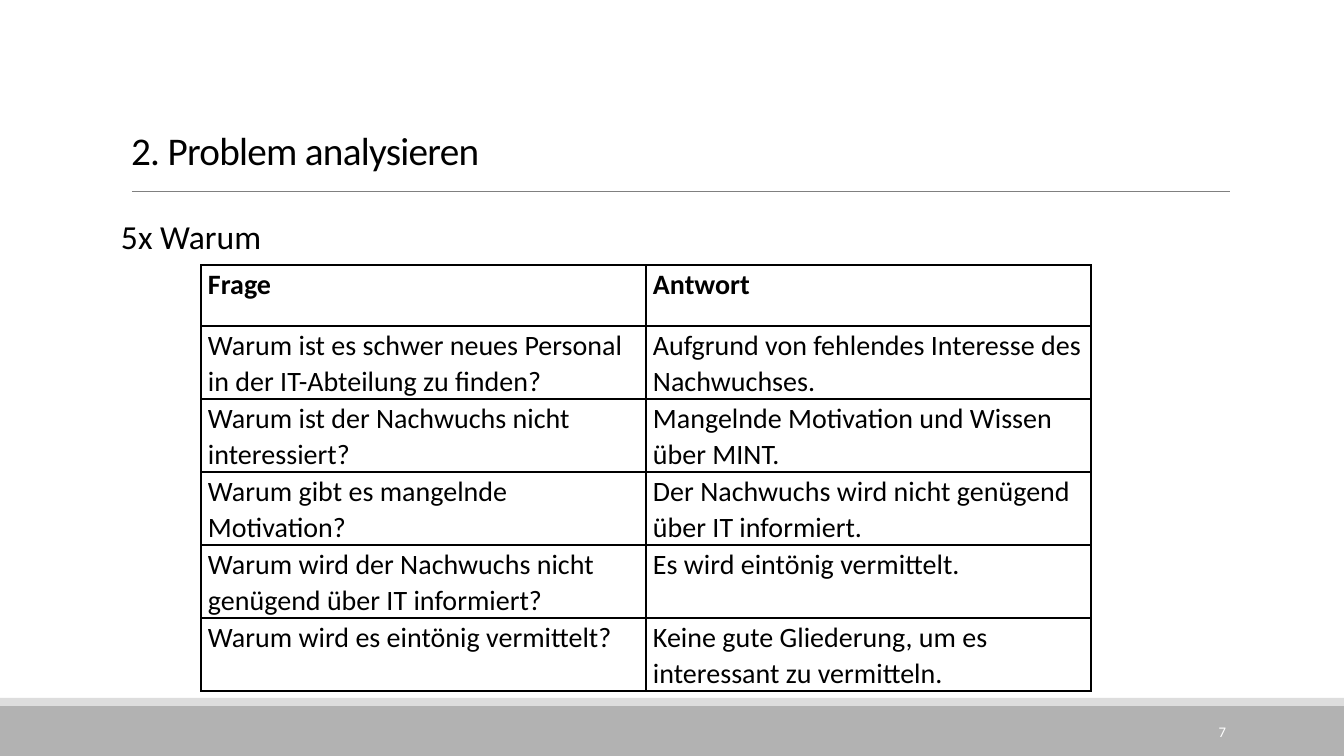
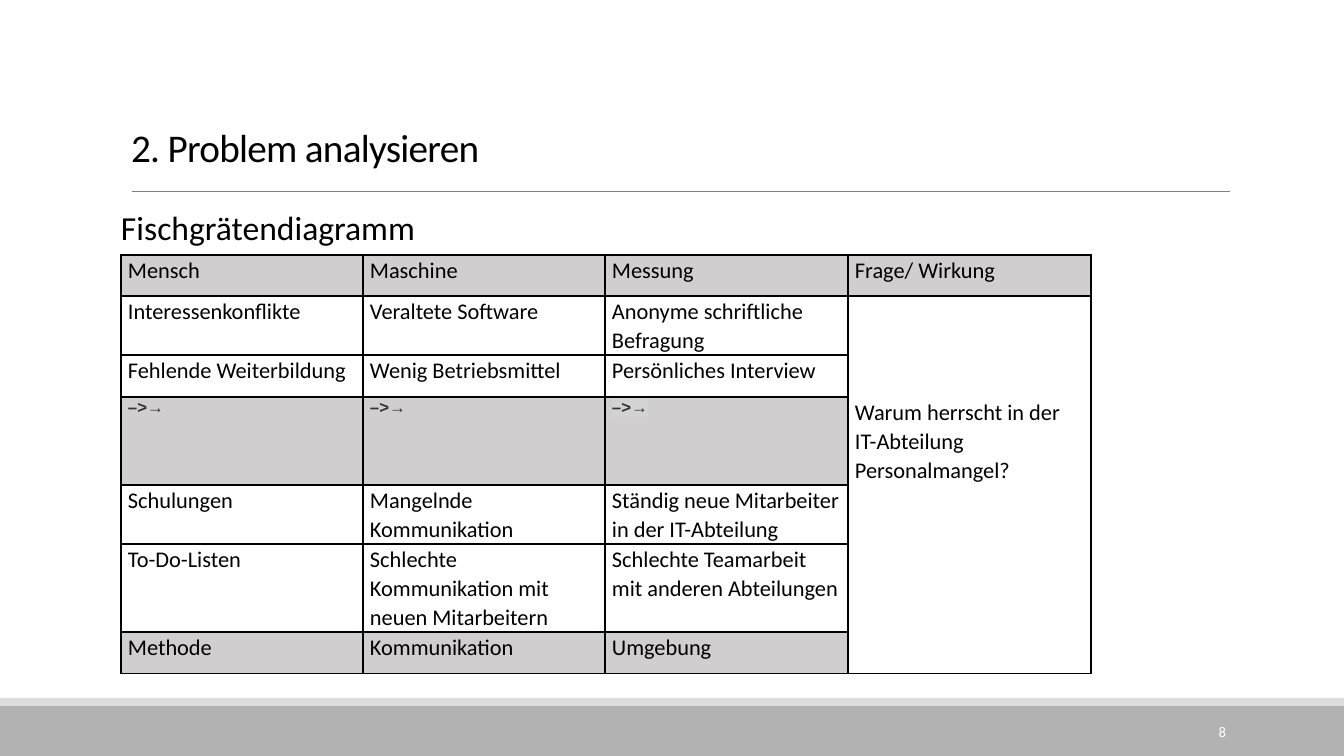
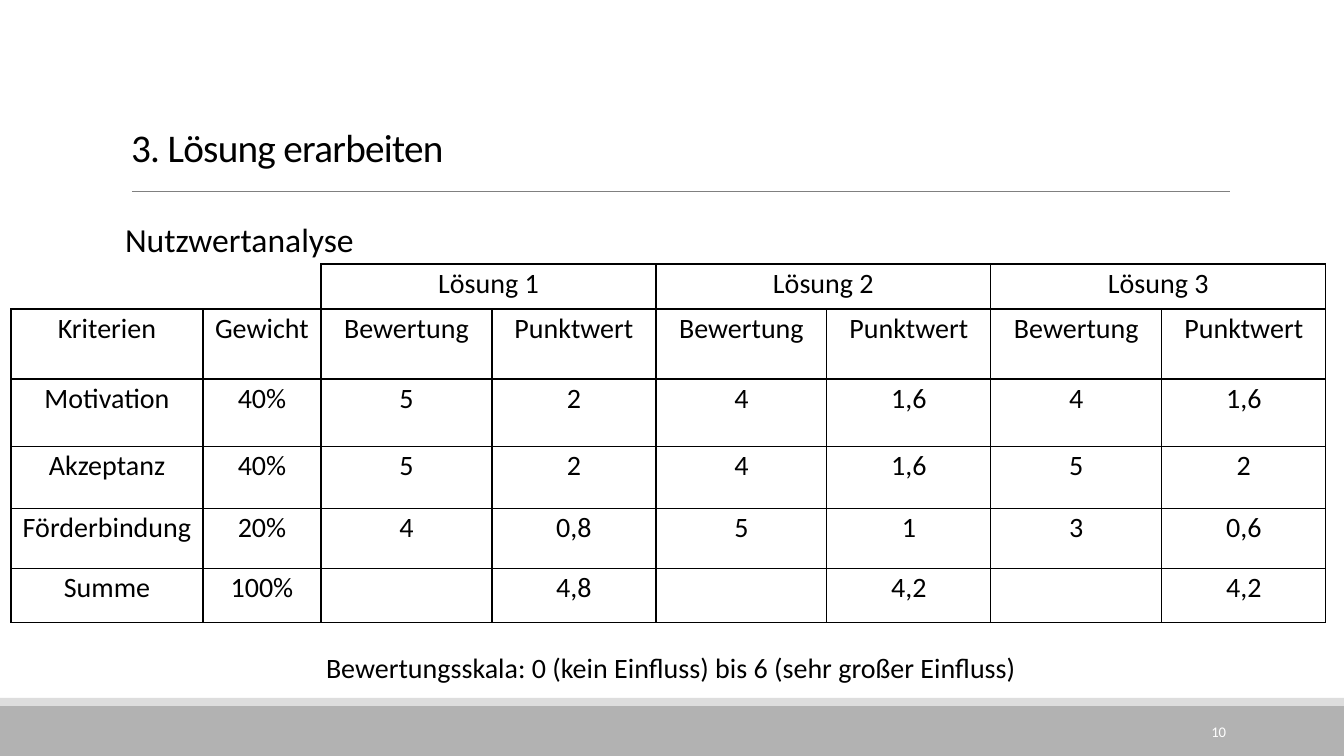
from lxml import etree
from pptx import Presentation
from pptx import util as u
from pptx.dml.color import RGBColor
from pptx.enum import shapes, text
from pptx.oxml import ns

SCALE = 12192000 / 1344  # EMU in one px
SLIDE_W, SLIDE_H = 1344, 756
TITLE_ONLY = 5

COLORS = {
    "text": "000000",
    "arrow": "333333",
    "highlight": "D3D3D3",
    "shade": "D0CECE",
    "band": "B2B2B2",
    "band_edge": "DDDDDD",
    "rule": "808080",
    "page": "FFFFFF",
}
LEFT, CENTER, RIGHT = text.PP_ALIGN.LEFT, text.PP_ALIGN.CENTER, text.PP_ALIGN.RIGHT
ALL_SIDES = "LRTB"

QUESTIONS = [
    ["Frage", "Antwort"],
    ["Warum ist es schwer neues Personal in der IT-Abteilung zu finden?",
     "Aufgrund von fehlendes Interesse des Nachwuchses."],
    ["Warum ist der Nachwuchs nicht interessiert?",
     "Mangelnde Motivation und Wissen über MINT."],
    ["Warum gibt es mangelnde Motivation?",
     "Der Nachwuchs wird nicht genügend über IT informiert."],
    ["Warum wird der Nachwuchs nicht genügend über IT informiert?",
     "Es wird eintönig vermittelt."],
    ["Warum wird es eintönig vermittelt?",
     "Keine gute Gliederung, um es interessant zu vermitteln."],
]

ARROW = "–>→"
FISHBONE = [
    ["Mensch", "Maschine", "Messung", "Frage/ Wirkung"],
    ["Interessenkonflikte", "Veraltete Software", "Anonyme schriftliche Befragung", ""],
    ["Fehlende Weiterbildung", "Wenig Betriebsmittel", "Persönliches Interview", ""],
    [ARROW, ARROW, ARROW, "Warum herrscht in der IT-Abteilung Personalmangel?"],
    ["Schulungen", "Mangelnde Kommunikation",
     "Ständig neue Mitarbeiter in der IT-Abteilung", ""],
    ["To-Do-Listen", "Schlechte Kommunikation mit neuen Mitarbeitern",
     "Schlechte Teamarbeit mit anderen Abteilungen", ""],
    ["Methode", "Kommunikation", "Umgebung", ""],
]

RATINGS = [
    ["", "", "Lösung 1", "", "Lösung 2", "", "Lösung 3", ""],
    ["Kriterien", "Gewicht"] + ["Bewertung", "Punktwert"] * 3,
    ["Motivation", "40%", "5", "2", "4", "1,6", "4", "1,6"],
    ["Akzeptanz", "40%", "5", "2", "4", "1,6", "5", "2"],
    ["Förderbindung", "20%", "4", "0,8", "5", "1", "3", "0,6"],
    ["Summe", "100%", "", "4,8", "", "4,2", "", "4,2"],
]


# Helpers
def px(length):
    return u.Emu(round(length * SCALE))


def rgb(color):
    return RGBColor.from_string(COLORS[color])


def apply(target, formats):
    for name, value in formats.items():
        setattr(target, name, value)


def write(frame, words, size, color="text", font="Calibri", bold=False,
          align=LEFT, spacing=1.0):
    """Fill a text frame with one paragraph and return its run."""
    paragraph = frame.paragraphs[0]
    apply(paragraph, {"alignment": align, "line_spacing": spacing})
    run = paragraph.add_run()
    run.text = words
    apply(run.font, {"size": u.Pt(size), "name": font, "bold": bold})
    run.font.color.rgb = rgb(color)
    return run


def add_label(slide, box, words, size, anchor=text.MSO_ANCHOR.TOP, inset=10, **style):
    frame = slide.shapes.add_textbox(*map(px, box)).text_frame
    apply(frame, {"word_wrap": True, "vertical_anchor": anchor,
                  "margin_left": px(inset), "margin_right": px(inset)})
    write(frame, words, size, **style)


def add_band(slide, top, height, color):
    band = slide.shapes.add_shape(shapes.MSO_SHAPE.RECTANGLE,
                                  *map(px, (0, top, SLIDE_W, height)))
    band.shadow.inherit = False
    band.fill.solid()
    band.fill.fore_color.rgb = rgb(color)
    band.line.fill.background()


def add_rule(slide, left, right, y):
    rule = slide.shapes.add_connector(shapes.MSO_CONNECTOR.STRAIGHT,
                                      *map(px, (left, y, right, y)))
    rule.line.color.rgb = rgb("rule")
    rule.line.width = u.Pt(0.5)
    etree.SubElement(rule._element.spPr, ns.qn("a:effectLst"))


# Slide frame: bands, title, rule, subtitle and page number
def add_content_slide(prs, title, title_top, title_bottom, subtitle, subtitle_at, number):
    slide = prs.slides.add_slide(prs.slide_layouts[TITLE_ONLY])
    add_band(slide, 706, 50, "band")
    add_band(slide, 698, 8, "band_edge")
    add_rule(slide, 132, 1230, 191)

    heading = slide.shapes.title
    apply(heading, {"left": px(121), "top": px(title_top),
                    "width": px(1109), "height": px(title_bottom - title_top)})
    apply(heading.text_frame, {"vertical_anchor": text.MSO_ANCHOR.BOTTOM,
                               "auto_size": text.MSO_AUTO_SIZE.NONE})
    run = write(heading.text_frame, title, 28, spacing=0.85)
    run.font._element.set("spc", "-50")

    add_label(slide, (*subtitle_at, 1109, 44), subtitle, 24, inset=0, spacing=0.9)
    add_label(slide, (1092, 712, 144, 40), number, 10.5, color="page",
              align=RIGHT, anchor=text.MSO_ANCHOR.MIDDLE)
    return slide


# Tables
def set_borders(cell, sides):
    properties = cell._tc.get_or_add_tcPr()
    for side in ALL_SIDES:
        border = etree.SubElement(properties, ns.qn("a:ln" + side), w=str(u.Pt(1)))
        if side in sides:
            fill = etree.SubElement(border, ns.qn("a:solidFill"))
            etree.SubElement(fill, ns.qn("a:srgbClr"), val=COLORS["text"])
        else:
            etree.SubElement(border, ns.qn("a:noFill"))


def add_grid(slide, left, top, widths, heights, rows, cell_style,
             cell_sides=lambda row, col: ALL_SIDES,
             shaded=lambda row, col: False, inset=7):
    """Draw a table; cell_style, cell_sides and shaded are rules on (row, col)."""
    table = slide.shapes.add_table(
        len(rows), len(widths),
        *map(px, (left, top, sum(widths), sum(heights)))).table
    apply(table, {"first_row": False, "horz_banding": False})
    for column, width in zip(table.columns, widths):
        column.width = px(width)
    for row, height in zip(table.rows, heights):
        row.height = px(height)
    for r, row_words in enumerate(rows):
        for c, words in enumerate(row_words):
            cell = table.cell(r, c)
            apply(cell, {"margin_left": px(inset), "margin_right": px(inset),
                         "margin_top": 0, "margin_bottom": 0})
            set_borders(cell, cell_sides(r, c))
            if shaded(r, c):
                cell.fill.solid()
                cell.fill.fore_color.rgb = rgb("shade")
            else:
                cell.fill.background()
            if words:
                write(cell.text_frame, words, spacing=1.07, **cell_style(r, c))
    return table


def highlight(cell):
    fill = cell.text_frame.paragraphs[0].runs[0].font._element.find(ns.qn("a:solidFill"))
    mark = etree.Element(ns.qn("a:highlight"))
    etree.SubElement(mark, ns.qn("a:srgbClr"), val=COLORS["highlight"])
    fill.addnext(mark)


# Slides
def add_five_whys(prs):
    slide = add_content_slide(prs, "2. Problem analysieren", 67, 179,
                              "5x Warum", (121, 215), "7")
    add_grid(slide, 201, 265, [445] * 2, [61] + [73] * 5, QUESTIONS,
             lambda row, col: {"size": 20, "bold": row == 0})


def add_fishbone(prs):
    arrow_row, last_row, effect_col = 3, len(FISHBONE) - 1, 3

    def cell_style(row, col):
        if FISHBONE[row][col] == ARROW:
            return {"size": 12, "font": "Arial", "color": "arrow", "bold": True}
        return {"size": 16}

    def cell_sides(row, col):
        if col < effect_col or row == 0:
            return ALL_SIDES
        return "LR" + {1: "T", last_row: "B"}.get(row, "")

    def shaded(row, col):
        return row == 0 or (row in (arrow_row, last_row) and col < effect_col)

    slide = add_content_slide(prs, "2. Problem analysieren", 57, 176,
                              "Fischgrätendiagramm", (121, 206), "8")
    causes = add_grid(slide, 121, 255, [242, 242, 243, 243],
                      [41, 59, 42, 88, 59, 88, 42], FISHBONE,
                      cell_style, cell_sides, shaded)
    highlight(causes.cell(arrow_row, 2))


def add_utility_analysis(prs):
    slide = add_content_slide(prs, "3. Lösung erarbeiten", 108, 176,
                              "Nutzwertanalyse", (125, 218), "10")
    ratings = add_grid(slide, 11, 264, [192, 118] + [171, 164] * 3,
                       [45, 70, 68, 62, 60, 54], RATINGS,
                       lambda row, col: {"size": 20, "align": CENTER},
                       lambda row, col: "RB" if row == 0 and col < 2 else ALL_SIDES,
                       inset=5)
    for col in range(0, 8, 2):
        ratings.cell(0, col).merge(ratings.cell(0, col + 1))
    add_label(slide, (316, 646, 715, 44),
              "Bewertungsskala: 0 (kein Einfluss) bis 6 (sehr großer Einfluss)", 20)


def main():
    prs = Presentation()
    apply(prs, {"slide_width": px(SLIDE_W), "slide_height": px(SLIDE_H)})
    add_five_whys(prs)
    add_fishbone(prs)
    add_utility_analysis(prs)
    prs.save("out.pptx")


if __name__ == "__main__":
    main()
